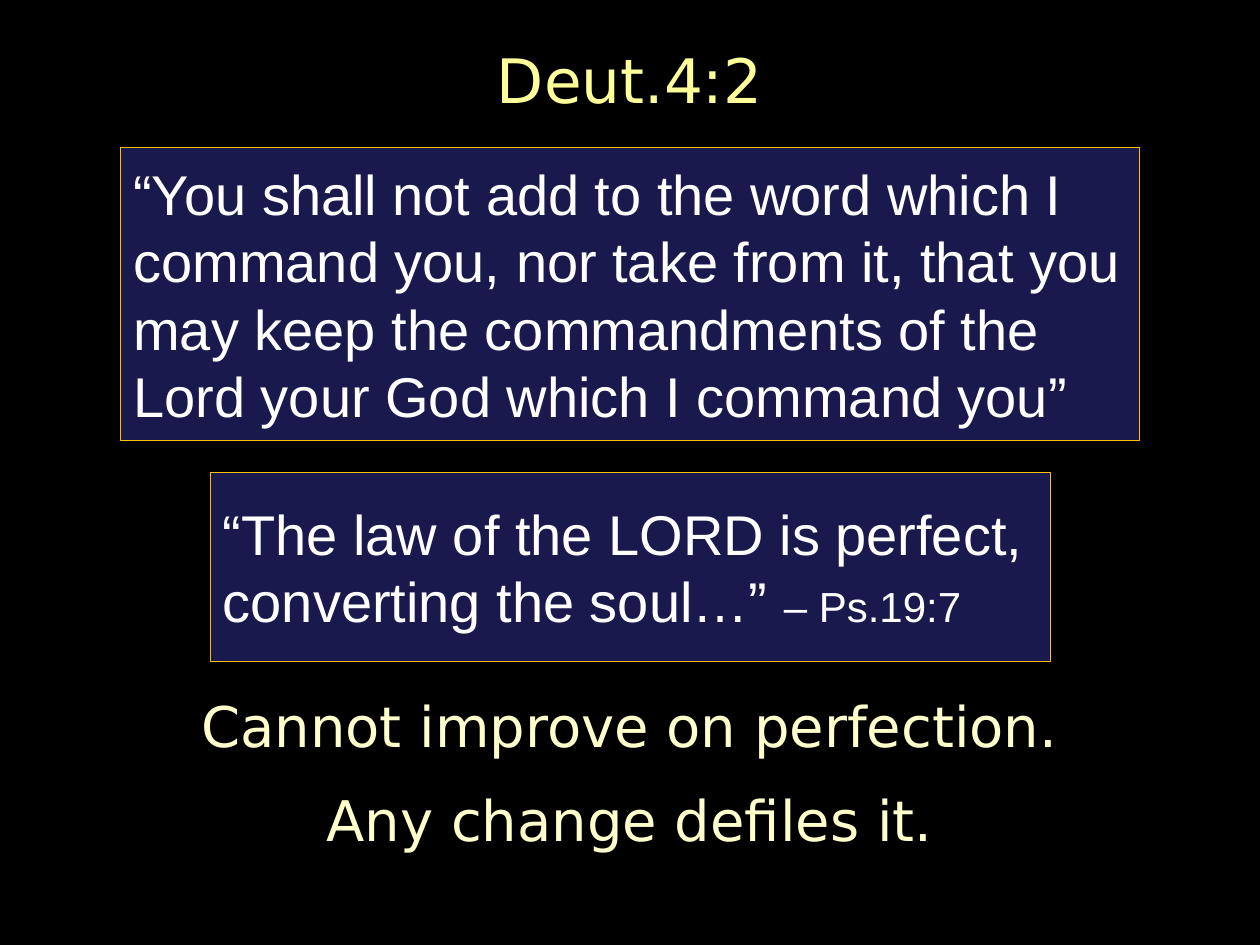
from pptx import Presentation
from pptx.dml.color import RGBColor
from pptx.enum.shapes import MSO_SHAPE
from pptx.enum.text import MSO_ANCHOR, PP_ALIGN
from pptx.util import Inches, Pt

COLORS = {
    "background": "000000",
    "title": "FFFF99",
    "conclusion": "FFFFCC",
    "verse": "FFFFFF",
    "panel": "19194D",
    "border": "FFC000",
}
HEADING_FONT = "DejaVu Sans"
VERSE_FONT = "Arial"


def color(name):
    return RGBColor.from_string(COLORS[name])


def add_run(paragraph, text, size, font, color_name):
    run = paragraph.add_run()
    run.text = text
    run.font.size = Pt(size)
    run.font.name = font
    run.font.color.rgb = color(color_name)


def place_title(slide, box, text):
    title = slide.shapes.title
    title.left, title.top, title.width, title.height = map(Inches, box)
    title.text_frame.vertical_anchor = MSO_ANCHOR.MIDDLE
    paragraph = title.text_frame.paragraphs[0]
    paragraph.alignment = PP_ALIGN.CENTER
    add_run(paragraph, text, 35, HEADING_FONT, "title")


def add_verse(slide, box, quote, reference=None):
    panel = slide.shapes.add_shape(MSO_SHAPE.RECTANGLE, *map(Inches, box))
    panel.shadow.inherit = False
    panel.fill.solid()
    panel.fill.fore_color.rgb = color("panel")
    panel.line.color.rgb = color("border")
    panel.line.width = Pt(0.5)
    frame = panel.text_frame
    frame.word_wrap = True
    frame.vertical_anchor = MSO_ANCHOR.MIDDLE
    paragraph = frame.paragraphs[0]
    paragraph.alignment = PP_ALIGN.LEFT
    add_run(paragraph, quote, 32, VERSE_FONT, "verse")
    if reference:
        add_run(paragraph, reference, 24, VERSE_FONT, "verse")


def add_conclusion(slide, box, statements):
    frame = slide.shapes.add_textbox(*map(Inches, box)).text_frame
    frame.word_wrap = True
    for index, statement in enumerate(statements):
        paragraph = frame.add_paragraph() if index else frame.paragraphs[0]
        paragraph.alignment = PP_ALIGN.CENTER
        paragraph.space_after = Pt(15)
        add_run(paragraph, statement, 32, HEADING_FONT, "conclusion")


def main():
    presentation = Presentation()
    presentation.slide_width = Inches(10)
    presentation.slide_height = Inches(7.5)
    slide = presentation.slides.add_slide(presentation.slide_layouts.get_by_name("Title Only"))
    slide.background.fill.solid()
    slide.background.fill.fore_color.rgb = color("background")

    place_title(slide, (0.5, 0.17, 9, 0.92), "Deut.4:2")
    add_conclusion(
        slide,
        (0.5, 5.44, 9, 1.56),
        ["Cannot improve on perfection.", "Any change defiles it."],
    )
    add_verse(
        slide,
        (0.96, 1.17, 8.08, 2.33),
        "“You shall not add to the word which I command you, nor take from it, "
        "that you may keep the commandments of the Lord your God which I command you”",
    )
    add_verse(
        slide,
        (1.67, 3.75, 6.67, 1.5),
        "“The law of the LORD is perfect, converting the soul…” ",
        "– Ps.19:7",
    )
    presentation.save("out.pptx")


if __name__ == "__main__":
    main()
